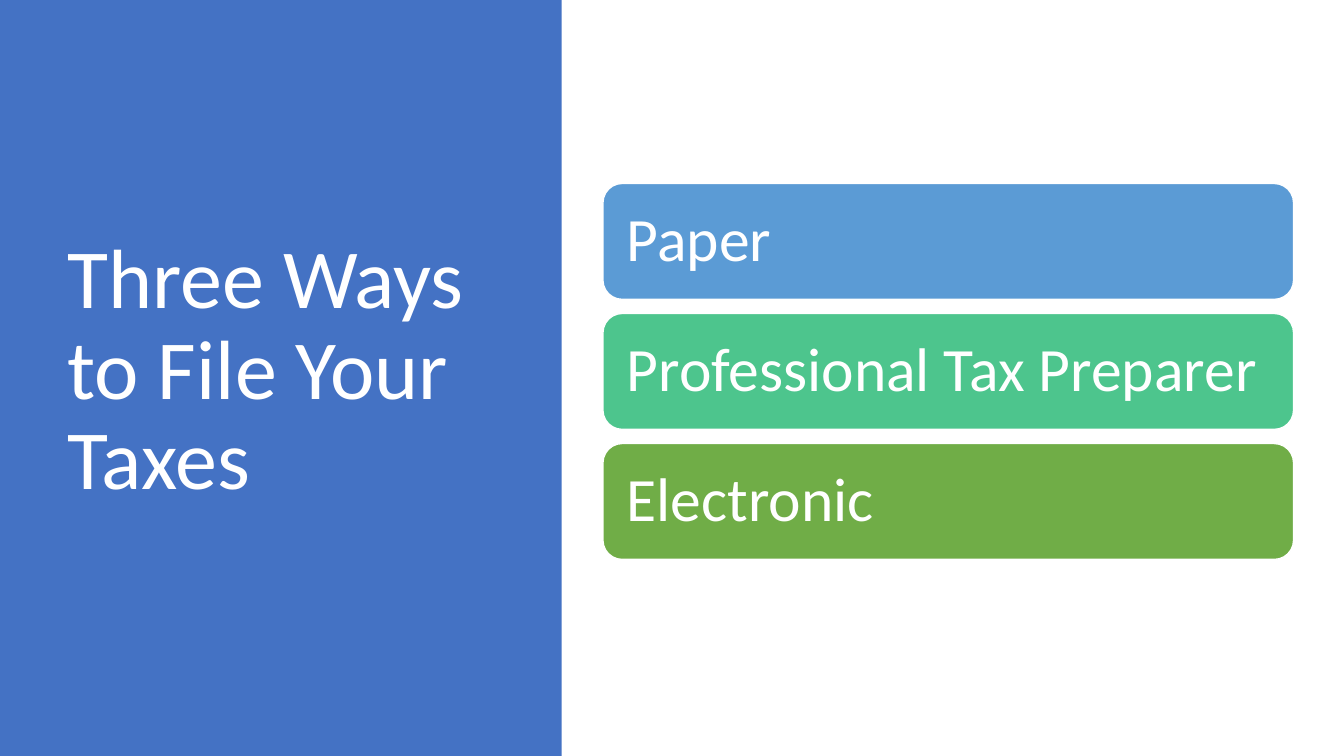
"""Build a slide that lists three ways to file taxes."""
import pptx
import pptx.util
import pptx.dml.color
import pptx.enum.shapes
import pptx.enum.text

Inches = pptx.util.Inches
Shape = pptx.enum.shapes.MSO_SHAPE


def color(hex):
    return pptx.dml.color.RGBColor.from_string(hex)


def write(frame, text, size, inset):
    frame.word_wrap = True
    frame.vertical_anchor = pptx.enum.text.MSO_ANCHOR.MIDDLE
    frame.margin_left = frame.margin_right = Inches(inset)
    para = frame.paragraphs[0]
    para.alignment = pptx.enum.text.PP_ALIGN.LEFT
    para.line_spacing = 0.9
    run = para.add_run()
    run.text = text
    run.font.size = pptx.util.Pt(size)
    run.font.name = "Calibri"
    run.font.color.rgb = color("FFFFFF")


deck = pptx.Presentation()
deck.slide_width = Inches(13.33)
deck.slide_height = Inches(7.5)
slide = deck.slides.add_slide(deck.slide_layouts[6])

panel = slide.shapes.add_shape(Shape.RECTANGLE, 0, 0, Inches(5.57), Inches(7.5))
panel.shadow.inherit = False
panel.fill.solid()
panel.fill.fore_color.rgb = color("4472C4")
panel.line.fill.background()

title = slide.shapes.add_textbox(Inches(0.57), Inches(0.68), Inches(4.16), Inches(6.02))
write(title.text_frame, "Three Ways to File Your Taxes", 60, 0.1)

ways = [
    ("Paper", "5B9BD5"),
    ("Professional Tax Preparer", "4DC58D"),
    ("Electronic", "70AD47"),
]
for row, (way, fill) in enumerate(ways):
    top = 1.82 + row * 1.29
    bar = slide.shapes.add_shape(
        Shape.ROUNDED_RECTANGLE, Inches(5.98), Inches(top), Inches(6.85), Inches(1.15)
    )
    bar.shadow.inherit = False
    bar.fill.solid()
    bar.fill.fore_color.rgb = color(fill)
    bar.line.color.rgb = color("FFFFFF")
    bar.line.width = pptx.util.Pt(1)
    write(bar.text_frame, way, 44, 0.18)

deck.save("out.pptx")
